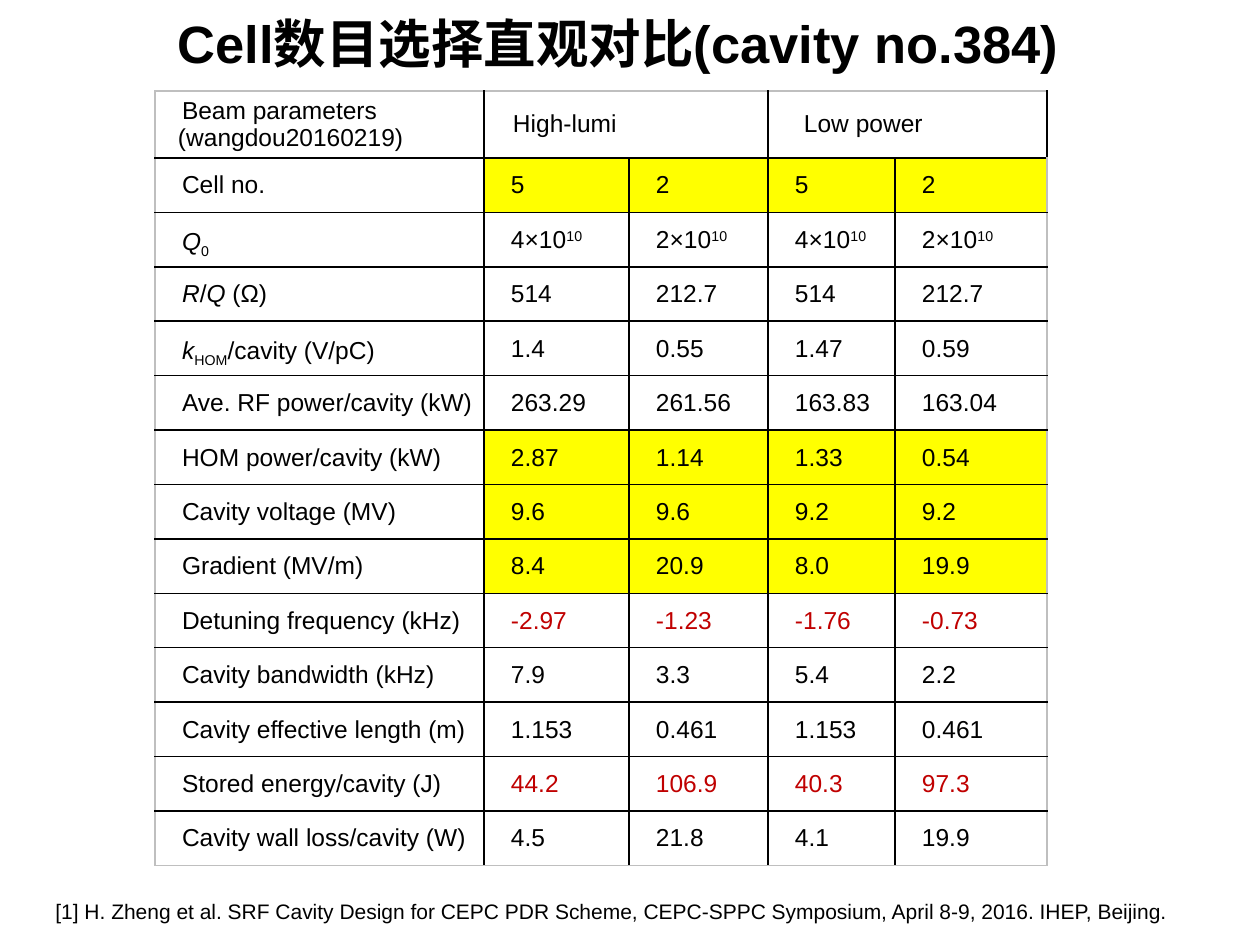
from lxml.etree import SubElement
from pptx import Presentation
from pptx.dml.color import RGBColor
from pptx.enum.text import MSO_ANCHOR, MSO_AUTO_SIZE, PP_ALIGN
from pptx.oxml.ns import qn
from pptx.util import Pt

PX = 914400 / 126
FONT, BLACK, RED, YELLOW, GRAY = "Arial", "000000", "C00000", "FFFF00", "BFBFBF"

TITLE = "Cell数目选择直观对比(cavity no.384)"
FOOTNOTE = ("[1] H. Zheng et al. SRF Cavity Design for CEPC PDR Scheme, "
            "CEPC-SPPC Symposium, April 8-9, 2016. IHEP, Beijing.")

# Cells hold plain text or a list of (text, run format) pairs
ITALIC, SUB, SUPER = {"italic": True}, {"baseline": -25000}, {"baseline": 30000}
Q_FIVE = [("4×10", {}), ("10", SUPER)]
Q_TWO = [("2×10", {}), ("10", SUPER)]

# First column, text, left margin, first-line indent
HEADERS = [
    (0, "Beam parameters\v(wangdou20160219)", 14, 4),
    (1, "High-lumi", 20, 0),
    (3, "Low power", 27, 0),
]
ROWS = [
    ("Cell no.", "5", "2", "5", "2"),
    ([("Q", ITALIC), ("0", SUB)], Q_FIVE, Q_TWO, Q_FIVE, Q_TWO),
    ([("R", ITALIC), ("/", {}), ("Q", ITALIC), (" (Ω)", {})],
     "514", "212.7", "514", "212.7"),
    ([("k", ITALIC), ("HOM", SUB), ("/cavity (V/pC)", {})],
     "1.4", "0.55", "1.47", "0.59"),
    ("Ave. RF power/cavity (kW)", "263.29", "261.56", "163.83", "163.04"),
    ("HOM power/cavity (kW)", "2.87", "1.14", "1.33", "0.54"),
    ("Cavity voltage (MV)", "9.6", "9.6", "9.2", "9.2"),
    ("Gradient (MV/m)", "8.4", "20.9", "8.0", "19.9"),
    ("Detuning frequency (kHz)", "-2.97", "-1.23", "-1.76", "-0.73"),
    ("Cavity bandwidth (kHz)", "7.9", "3.3", "5.4", "2.2"),
    ("Cavity effective length (m)", "1.153", "0.461", "1.153", "0.461"),
    ("Stored energy/cavity (J)", "44.2", "106.9", "40.3", "97.3"),
    ("Cavity wall loss/cavity (W)", "4.5", "21.8", "4.1", "19.9"),
]
YELLOW_ROWS, RED_ROWS = {1, 6, 7, 8}, {9, 12}

COLUMN_WIDTHS = [329, 145, 139, 127, 152]
TABLE_LEFT, TABLE_TOP, TABLE_HEIGHT, HEADER_HEIGHT = 155, 91, 775, 67
CELL_FORMAT = {"margin_left": 9, "margin_right": 9, "margin_top": 0, "margin_bottom": 0}
CELL_SPACING = {"space_before": Pt(3), "space_after": Pt(3)}


def px(value):
    return round(value * PX)


def color(hex_string):
    return RGBColor.from_string(hex_string)


def set_all(target, values):
    for name, value in values.items():
        setattr(target, name, value)


def add_run(paragraph, text, size, hex_color=BLACK, baseline=None, **font_format):
    run = paragraph.add_run()
    run.text = text
    set_all(run.font, {"name": FONT, "size": Pt(size), **font_format})
    run.font.color.rgb = color(hex_color)
    if baseline:
        run.font._element.set("baseline", str(baseline))


def fill_cell(cell, content, hex_color, left_margin, indent):
    set_all(cell, {name: px(value) for name, value in CELL_FORMAT.items()})
    paragraph = cell.text_frame.paragraphs[0]
    set_all(paragraph, CELL_SPACING)
    properties = paragraph._p.get_or_add_pPr()
    properties.set("marL", str(px(left_margin)))
    properties.set("indent", str(px(indent)))
    runs = [(content, {})] if isinstance(content, str) else content
    for text, run_format in runs:
        for number, line in enumerate(text.split("\v")):
            if number:
                paragraph.add_line_break()
            add_run(paragraph, line, 14, hex_color, **run_format)
    return paragraph


def set_borders(cell, outer_sides):
    properties = cell._tc.get_or_add_tcPr()
    for position, side in enumerate("LRTB"):
        line = SubElement(properties, qn(f"a:ln{side}"), w=str(Pt(1)))
        solid = SubElement(line, qn("a:solidFill"))
        SubElement(solid, qn("a:srgbClr"), val=GRAY if side in outer_sides else BLACK)
        properties.insert(position, line)


def add_parameter_table(slide):
    row_count, column_count = len(ROWS) + 1, len(COLUMN_WIDTHS)
    table = slide.shapes.add_table(
        row_count, column_count, px(TABLE_LEFT), px(TABLE_TOP),
        px(sum(COLUMN_WIDTHS)), px(TABLE_HEIGHT)).table
    set_all(table, {"first_row": False, "horz_banding": False})
    for column, width in zip(table.columns, COLUMN_WIDTHS):
        column.width = px(width)
    for number, row in enumerate(table.rows):
        row.height = px((TABLE_HEIGHT - HEADER_HEIGHT) / len(ROWS) if number else HEADER_HEIGHT)

    # Header row
    for first in (1, 3):
        table.cell(0, first).merge(table.cell(0, first + 1))
    for column, text, left_margin, indent in HEADERS:
        cell = table.cell(0, column)
        fill_cell(cell, text, BLACK, left_margin, indent)
        cell.vertical_anchor = MSO_ANCHOR.MIDDLE

    # Parameter rows
    for r, values in enumerate(ROWS, 1):
        for c, content in enumerate(values):
            text_color = RED if c and r in RED_ROWS else BLACK
            paragraph = fill_cell(table.cell(r, c), content, text_color, 0, 18)
            paragraph.line_spacing = 1.5

    # Fills and borders
    for r in range(row_count):
        for c in range(column_count):
            cell = table.cell(r, c)
            if c and r in YELLOW_ROWS:
                cell.fill.solid()
                cell.fill.fore_color.rgb = color(YELLOW)
            else:
                cell.fill.background()
            edges = {"L": c == 0, "R": c == column_count - 1,
                     "T": r == 0, "B": r == row_count - 1}
            set_borders(cell, [side for side, outer in edges.items() if outer])


def main():
    presentation = Presentation()
    set_all(presentation, {"slide_width": px(1260), "slide_height": px(945)})
    slide = presentation.slides.add_slide(presentation.slide_layouts[5])

    # Title
    title = slide.shapes.title
    set_all(title, {"left": px(126), "top": px(18), "width": px(984), "height": px(58)})
    set_all(title.text_frame, {"word_wrap": True, "auto_size": MSO_AUTO_SIZE.NONE,
                               "vertical_anchor": MSO_ANCHOR.MIDDLE})
    paragraph = title.text_frame.paragraphs[0]
    set_all(paragraph, {"alignment": PP_ALIGN.CENTER, "line_spacing": 0.9})
    add_run(paragraph, TITLE, 30, bold=True)

    add_parameter_table(slide)

    # Footnote
    footnote = slide.shapes.add_textbox(px(43), px(892), px(1203), px(38))
    set_all(footnote.text_frame, {"word_wrap": True,
                                  "auto_size": MSO_AUTO_SIZE.SHAPE_TO_FIT_TEXT})
    add_run(footnote.text_frame.paragraphs[0], FOOTNOTE, 12)

    presentation.save("out.pptx")


if __name__ == "__main__":
    main()
